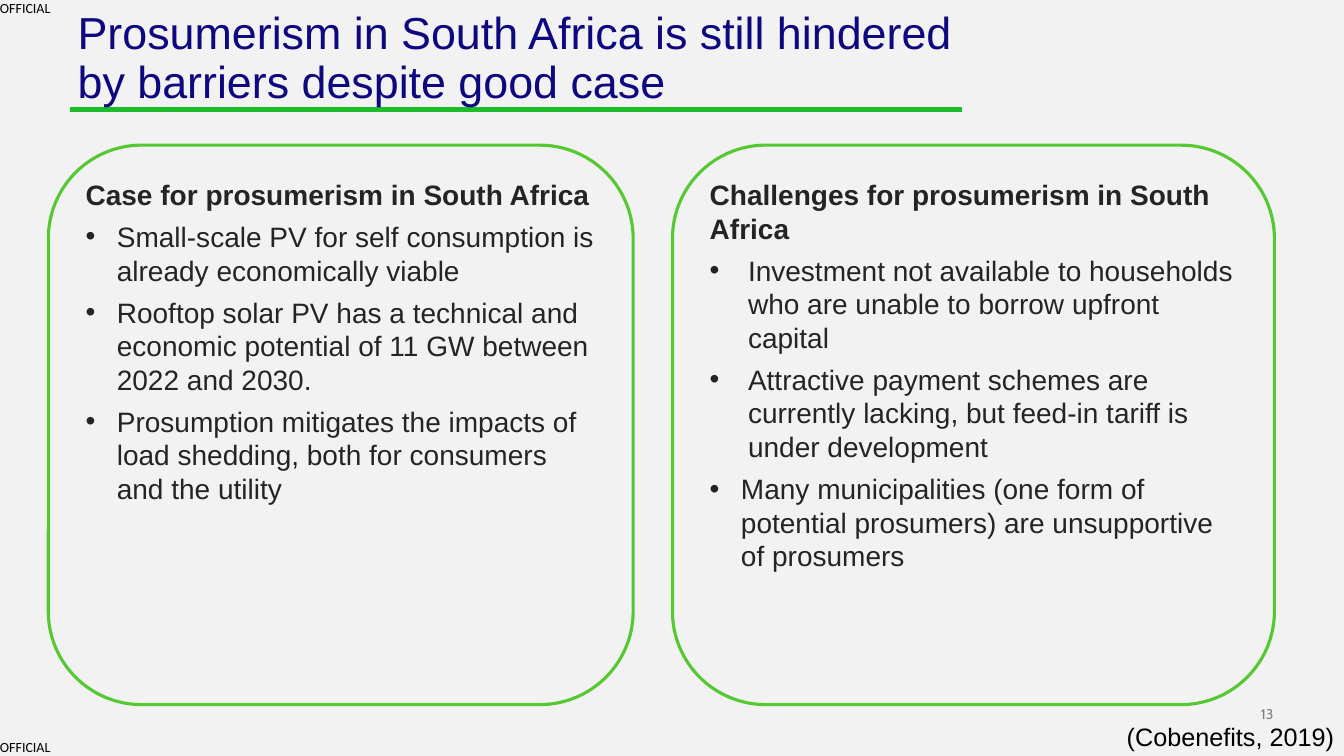
from lxml.etree import SubElement
from pptx import Presentation
from pptx.dml.color import RGBColor
from pptx.enum.shapes import MSO_SHAPE as Shape
from pptx.enum.text import MSO_ANCHOR as Anchor, PP_ALIGN as Align
from pptx.oxml.ns import qn
from pptx.util import Inches, Pt

COLOURS = {"background": "F2F2F2", "title": "0D0780", "rule": "1CBC2B",
           "panel": "56C932", "body": "242424", "black": "000000", "grey": "7F7F7F"}

# Content: panels hold left, width, heading and (indent, bullet text) pairs
PANELS = [
    (0.48, 5.8, "Case for prosumerism in South Africa", [
        (0.31, "Small-scale PV for self consumption is already economically viable"),
        (0.31, "Rooftop solar PV has a technical and economic potential of "
               "11 GW between 2022 and 2030."),
        (0.31, "Prosumption mitigates the impacts of load shedding, both for "
               "consumers and the utility"),
    ]),
    (6.67, 5.97, "Challenges for prosumerism in South Africa", [
        (0.38, "Investment not available to households who are unable to borrow "
               "upfront capital"),
        (0.38, "Attractive payment schemes are currently lacking, but feed-in "
               "tariff is under development"),
        (0.31, "Many municipalities (one form of potential prosumers) are "
               "unsupportive of prosumers"),
    ]),
]
PANEL_TOP, PANEL_HEIGHT = 1.44, 5.55

# Labels: text, box, font, size, colour, frame format, paragraph format
FLUSH = dict(margin_left=0, margin_top=0, margin_right=0, margin_bottom=0)
MARKING = ("Calibri", 10, "black", dict(FLUSH, word_wrap=False), {})
LABELS = [
    ("13", (12.21, 7, 0.42, 0.17), "Cabin", 10, "grey",
     dict(FLUSH, word_wrap=True, vertical_anchor=Anchor.BOTTOM),
     dict(alignment=Align.RIGHT)),
    ("OFFICIAL", (0, 7.33, 0.53, 0.17), *MARKING),
    ("OFFICIAL", (0, 0, 0.53, 0.17), *MARKING),
    ("Prosumerism in South Africa is still hindered by barriers despite good case",
     (0.77, 0.11, 8.86, 0.97), "Arial", 32, "title",
     dict(FLUSH, word_wrap=True), dict(line_spacing=0.9)),
    ("(Cobenefits, 2019)", (7.58, 7.11, 5.75, 0.4), "Arial", 18, "black",
     dict(word_wrap=True, vertical_anchor=Anchor.MIDDLE),
     dict(alignment=Align.RIGHT)),
]


def rgb(name):
    return RGBColor.from_string(COLOURS[name])


def apply(target, formats):
    for name, value in formats.items():
        setattr(target, name, value)


def write(paragraph, text, font, size, colour, bold=False):
    run = paragraph.add_run()
    run.text = text
    apply(run.font, dict(name=font, size=Pt(size), bold=bold))
    run.font.color.rgb = rgb(colour)


def add_outline(slide, kind, box, colour, width):
    outline = slide.shapes.add_shape(kind, *map(Inches, box))
    outline.shadow.inherit = False
    outline.line.color.rgb = rgb(colour)
    outline.line.width = Pt(width)
    return outline


def add_bullet(paragraph, indent):
    properties = paragraph._p.get_or_add_pPr()
    properties.set("marL", str(Inches(indent)))
    properties.set("indent", str(-Inches(indent)))
    SubElement(properties, qn("a:buFont"), typeface="Arial")
    SubElement(properties, qn("a:buChar"), char="•")


def add_panel(slide, left, width, heading, bullets):
    panel = add_outline(slide, Shape.ROUNDED_RECTANGLE,
                        (left, PANEL_TOP, width, PANEL_HEIGHT), "panel", 2.25)
    panel.fill.background()
    frame = panel.text_frame
    apply(frame, dict(word_wrap=True, vertical_anchor=Anchor.TOP))
    for row, (indent, text) in enumerate([(0, heading), *bullets]):
        paragraph = frame.add_paragraph() if row else frame.paragraphs[0]
        apply(paragraph, dict(alignment=Align.LEFT, space_after=Pt(6)))
        if indent:
            add_bullet(paragraph, indent)
        write(paragraph, text, "Arial", 20, "body", bold=not indent)


def add_label(slide, text, box, font, size, colour, frame_format, paragraph_format):
    frame = slide.shapes.add_textbox(*map(Inches, box)).text_frame
    apply(frame, frame_format)
    apply(frame.paragraphs[0], paragraph_format)
    write(frame.paragraphs[0], text, font, size, colour)


def main():
    deck = Presentation()
    apply(deck, dict(slide_width=Inches(13.33), slide_height=Inches(7.5)))
    slide = deck.slides.add_slide(deck.slide_layouts[6])
    slide.background.fill.solid()
    slide.background.fill.fore_color.rgb = rgb("background")

    # Green rule under the title
    rule = add_outline(slide, Shape.RECTANGLE, (0.7, 1.07, 8.84, 0.04), "rule", 0.01)
    rule.fill.solid()
    rule.fill.fore_color.rgb = rgb("rule")

    # Two panels, then title, markings, page number and citation
    for panel in PANELS:
        add_panel(slide, *panel)
    for label in LABELS:
        add_label(slide, *label)
    deck.save("out.pptx")


if __name__ == "__main__":
    main()
